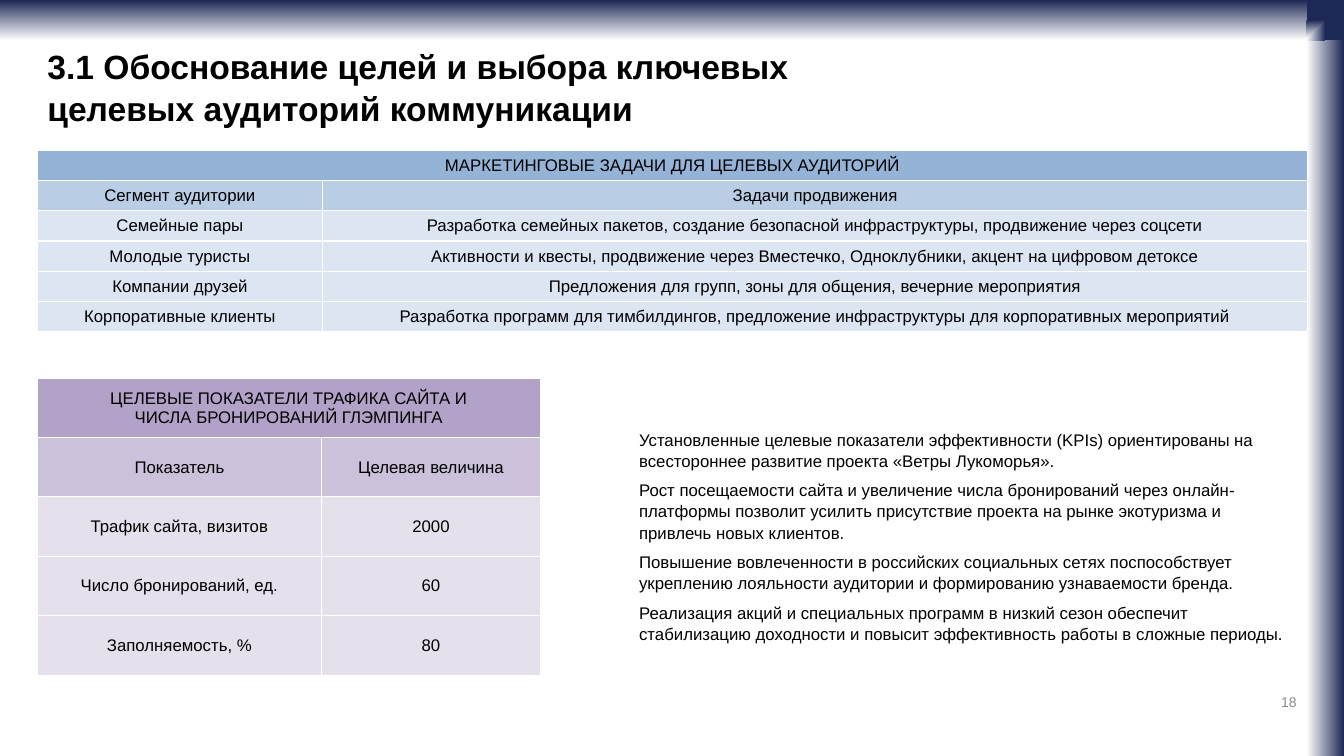
from dataclasses import dataclass

from lxml.etree import SubElement
from pptx import Presentation
from pptx.dml.color import RGBColor
from pptx.enum.shapes import MSO_SHAPE
from pptx.enum.text import MSO_ANCHOR, MSO_AUTO_SIZE, PP_ALIGN
from pptx.oxml import parse_xml
from pptx.oxml.ns import nsdecls, qn
from pptx.slide import Slide
from pptx.table import _Cell
from pptx.text.text import TextFrame
from pptx.util import Inches, Pt

FONT = "Arial"
BLACK, WHITE, NAVY, GREY = "000000", "FFFFFF", "1E2856", "8C8C8C"
SLIDE_WIDTH, SLIDE_HEIGHT = 13.33, 7.5
SIDE_WIDTH, TOP_HEIGHT = 0.37, 0.4
SIDE_LEFT = SLIDE_WIDTH - SIDE_WIDTH
MARGIN = 0.37


@dataclass(frozen=True)
class Box:
    left: float
    top: float
    width: float
    height: float

    def lengths(self) -> tuple[Inches, ...]:
        return tuple(Inches(v) for v in (self.left, self.top, self.width, self.height))


@dataclass(frozen=True)
class Band:
    box: Box
    angle: int
    from_corner: bool = False


@dataclass(frozen=True)
class Grid:
    left: float
    top: float
    columns: tuple[float, ...]
    row_height: float
    heading: str
    rows: tuple[tuple[str, ...], ...]
    heading_fill: str
    label_fill: str
    value_fill: str


BANDS = (
    Band(Box(SIDE_LEFT, 0, SIDE_WIDTH, SLIDE_HEIGHT), 0),
    Band(Box(0, 0, SLIDE_WIDTH, TOP_HEIGHT), 90),
    Band(Box(SIDE_LEFT, 0, SIDE_WIDTH, TOP_HEIGHT), 0, from_corner=True),
)

AUDIENCE_TASKS = Grid(
    MARGIN, 1.49, (2.83, 9.77), 0.3,
    "МАРКЕТИНГОВЫЕ ЗАДАЧИ ДЛЯ ЦЕЛЕВЫХ АУДИТОРИЙ",
    (
        ("Сегмент аудитории", "Задачи продвижения"),
        ("Семейные пары", "Разработка семейных пакетов, создание безопасной инфраструктуры, продвижение через соцсети"),
        ("Молодые туристы", "Активности и квесты, продвижение через Вместечко, Одноклубники, акцент на цифровом детоксе"),
        ("Компании друзей", "Предложения для групп, зоны для общения, вечерние мероприятия"),
        ("Корпоративные клиенты", "Разработка программ для тимбилдингов, предложение инфраструктуры для корпоративных мероприятий"),
    ),
    "95B3D7", "B9CDE5", "DCE6F2",
)

TRAFFIC_TARGETS = Grid(
    MARGIN, 3.75, (2.82, 2.17), 0.59,
    "ЦЕЛЕВЫЕ ПОКАЗАТЕЛИ ТРАФИКА САЙТА И\nЧИСЛА БРОНИРОВАНИЙ ГЛЭМПИНГА",
    (
        ("Показатель", "Целевая величина"),
        ("Трафик сайта, визитов", "2000"),
        ("Число бронирований, ед.", "60"),
        ("Заполняемость, %", "80"),
    ),
    "B3A2C7", "CCC1DA", "E6E0EC",
)

CONCLUSIONS = (
    "Установленные целевые показатели эффективности (KPIs) ориентированы на всестороннее развитие проекта «Ветры Лукоморья».",
    "Рост посещаемости сайта и увеличение числа бронирований через онлайн-платформы позволит усилить присутствие проекта на рынке экотуризма и привлечь новых клиентов.",
    "Повышение вовлеченности в российских социальных сетях поспособствует укреплению лояльности аудитории и формированию узнаваемости бренда.",
    "Реализация акций и специальных программ в низкий сезон обеспечит стабилизацию доходности и повысит эффективность работы в сложные периоды.",
)


def color(value: str) -> RGBColor:
    return RGBColor.from_string(value)


def write(frame: TextFrame, text: str, size: int, align: PP_ALIGN,
          ink: str = BLACK, bold: bool = False, line_spacing: float = 1.0) -> None:
    frame.text = text
    frame.word_wrap = True
    for paragraph in frame.paragraphs:
        paragraph.alignment = align
        paragraph.line_spacing = line_spacing
        paragraph.font.name = FONT
        paragraph.font.size = Pt(size)
        paragraph.font.bold = bold
        paragraph.font.color.rgb = color(ink)


def draw_band(slide: Slide, band: Band) -> None:
    shape = slide.shapes.add_shape(MSO_SHAPE.RECTANGLE, *band.box.lengths())
    shape.shadow.inherit = False
    shape.line.fill.background()
    shape.fill.gradient()
    shape.fill.gradient_angle = band.angle
    for stop, tint in zip(shape.fill.gradient_stops, (WHITE, NAVY)):
        stop.color.rgb = color(tint)
    if band.from_corner:
        linear = next(shape.element.iter(qn("a:lin")))
        radial = parse_xml(
            f'<a:path {nsdecls("a")} path="rect"><a:fillToRect t="100000" r="100000"/></a:path>'
        )
        linear.getparent().replace(linear, radial)


def add_borders(cell: _Cell) -> None:
    properties = cell._tc.get_or_add_tcPr()
    for position, side in enumerate(("lnL", "lnR", "lnT", "lnB")):
        border = parse_xml(f'<a:{side} {nsdecls("a")} w="12700"/>')
        fill = SubElement(border, qn("a:solidFill"))
        SubElement(fill, qn("a:srgbClr"), val=WHITE)
        properties.insert(position, border)


def draw_grid(slide: Slide, grid: Grid) -> None:
    row_count = len(grid.rows) + 1
    box = Box(grid.left, grid.top, sum(grid.columns), grid.row_height * row_count)
    table = slide.shapes.add_table(row_count, len(grid.columns), *box.lengths()).table
    table.first_row = False
    table.horz_banding = False
    for column, width in zip(table.columns, grid.columns):
        column.width = Inches(width)
    table.cell(0, 0).merge(table.cell(0, len(grid.columns) - 1))
    fills = (grid.heading_fill, grid.label_fill) + (grid.value_fill,) * (row_count - 2)
    for row, texts, fill in zip(table.rows, ((grid.heading, ""), *grid.rows), fills):
        row.height = Inches(grid.row_height)
        for cell, text in zip(row.cells, texts):
            cell.margin_left = cell.margin_right = Inches(0.05)
            cell.margin_top = cell.margin_bottom = Inches(0.05)
            cell.vertical_anchor = MSO_ANCHOR.MIDDLE
            cell.fill.solid()
            cell.fill.fore_color.rgb = color(fill)
            add_borders(cell)
            write(cell.text_frame, text, 12, PP_ALIGN.CENTER)


def draw_title(slide: Slide) -> None:
    title = slide.shapes.title
    title.left, title.top, title.width, title.height = Box(MARGIN, 0.4, 7.79, 0.91).lengths()
    frame = title.text_frame
    frame.auto_size = MSO_AUTO_SIZE.NONE
    frame.vertical_anchor = MSO_ANCHOR.MIDDLE
    write(frame, "3.1 Обоснование целей и выбора ключевых целевых аудиторий коммуникации",
          24, PP_ALIGN.LEFT, bold=True, line_spacing=1.05)


def draw_conclusions(slide: Slide) -> None:
    frame = slide.shapes.add_textbox(*Box(6.24, 4.2, 6.72, 2.17).lengths()).text_frame
    write(frame, "\n".join(CONCLUSIONS), 12, PP_ALIGN.LEFT, line_spacing=1.05)
    for paragraph in frame.paragraphs[1:]:
        paragraph.space_before = Pt(6)


def draw_page_number(slide: Slide) -> None:
    frame = slide.shapes.add_textbox(*Box(12.1, 6.83, 0.86, 0.27).lengths()).text_frame
    frame.vertical_anchor = MSO_ANCHOR.MIDDLE
    write(frame, "18", 10, PP_ALIGN.RIGHT, ink=GREY)


def main() -> None:
    presentation = Presentation()
    presentation.slide_width = Inches(SLIDE_WIDTH)
    presentation.slide_height = Inches(SLIDE_HEIGHT)
    slide = presentation.slides.add_slide(presentation.slide_layouts.get_by_name("Title Only"))
    for band in BANDS:
        draw_band(slide, band)
    draw_title(slide)
    draw_page_number(slide)
    draw_conclusions(slide)
    for grid in (AUDIENCE_TASKS, TRAFFIC_TARGETS):
        draw_grid(slide, grid)
    presentation.save("out.pptx")


if __name__ == "__main__":
    main()
